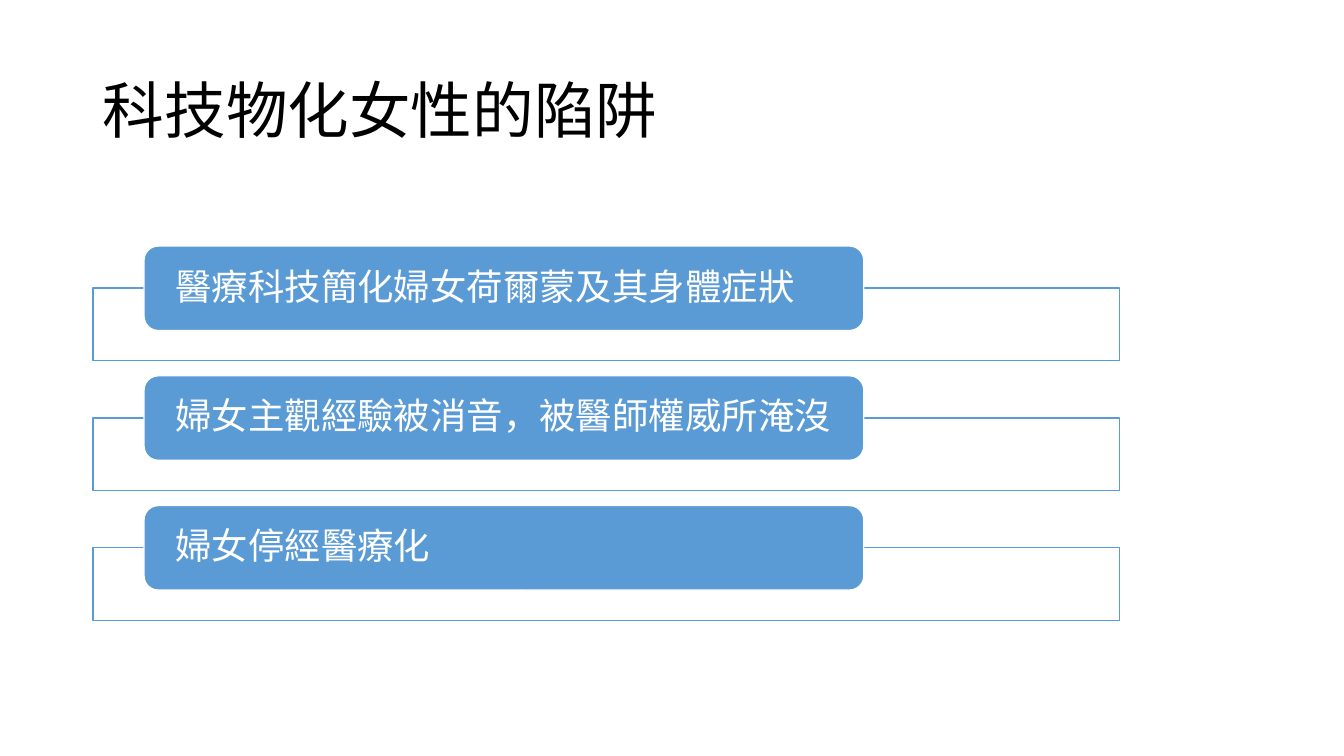
from dataclasses import dataclass

from lxml import etree
from pptx import Presentation
from pptx import util as u
from pptx.dml.color import RGBColor
from pptx.enum import shapes, text
from pptx.oxml import ns
from pptx.shapes.autoshape import Shape
from pptx.slide import Slide
from pptx.text.text import TextFrame

BLUE = RGBColor(0x5B, 0x9B, 0xD5)
WHITE = RGBColor(0xFF, 0xFF, 0xFF)
BLACK = RGBColor(0x00, 0x00, 0x00)
FONT = "Noto Sans CJK SC"

FIRST_TOP = 6.2
ROW_PITCH = 3.27
FRAME_DROP = 1.06  # from the top of a label to the top of its frame


@dataclass
class Box:
    preset: shapes.MSO_SHAPE
    left: float
    width: float
    height: float
    fill: RGBColor
    line: RGBColor


FRAME = Box(shapes.MSO_SHAPE.RECTANGLE, 2.34, 25.88, 1.83, WHITE, BLUE)
LABEL = Box(shapes.MSO_SHAPE.ROUNDED_RECTANGLE, 3.63, 18.14, 2.13, BLUE, WHITE)

TRAPS = [
    "醫療科技簡化婦女荷爾蒙及其身體症狀",
    "婦女主觀經驗被消音，被醫師權威所淹沒",
    "婦女停經醫療化",
]


def write(frame: TextFrame, words: str, size: float, color: RGBColor) -> None:
    frame.text = words
    frame.word_wrap = True
    frame.vertical_anchor = text.MSO_ANCHOR.MIDDLE
    paragraph = frame.paragraphs[0]
    paragraph.alignment = text.PP_ALIGN.LEFT
    paragraph.line_spacing = 0.9
    run = paragraph.runs[0]
    run.font.size = u.Pt(size)
    run.font.name = FONT
    run.font.color.rgb = color
    # East Asian typeface
    east_asian = etree.SubElement(run.font._element, ns.qn("a:ea"))
    east_asian.set("typeface", FONT)


def draw_box(slide: Slide, box: Box, top: float) -> Shape:
    shape = slide.shapes.add_shape(
        box.preset, u.Cm(box.left), u.Cm(top), u.Cm(box.width), u.Cm(box.height))
    shape.shadow.inherit = False
    shape.fill.solid()
    shape.fill.fore_color.rgb = box.fill
    shape.line.color.rgb = box.line
    shape.line.width = u.Pt(1)
    return shape


def draw_trap(slide: Slide, words: str, top: float) -> None:
    # Slightly transparent frame behind the label
    frame = draw_box(slide, FRAME, top + FRAME_DROP)
    frame_color = frame._element.spPr.find(ns.qn("a:solidFill"))[0]
    etree.SubElement(frame_color, ns.qn("a:alpha")).set("val", "90000")

    label = draw_box(slide, LABEL, top)
    label_text = label.text_frame
    label_text.margin_left = label_text.margin_right = u.Cm(0.69)
    label_text.margin_top = label_text.margin_bottom = 0
    write(label_text, words, 26, WHITE)


def main() -> None:
    deck = Presentation()
    deck.slide_width, deck.slide_height = u.Cm(33.87), u.Cm(19.05)
    slide = deck.slides.add_slide(deck.slide_layouts[5])

    # Title
    title = slide.shapes.title
    title.left, title.top = u.Cm(2.34), u.Cm(1.02)
    title.width, title.height = u.Cm(29.21), u.Cm(3.68)
    write(title.text_frame, "科技物化女性的陷阱", 44, BLACK)

    # List of traps
    for row, words in enumerate(TRAPS):
        draw_trap(slide, words, FIRST_TOP + row * ROW_PITCH)

    deck.save("out.pptx")


if __name__ == "__main__":
    main()
